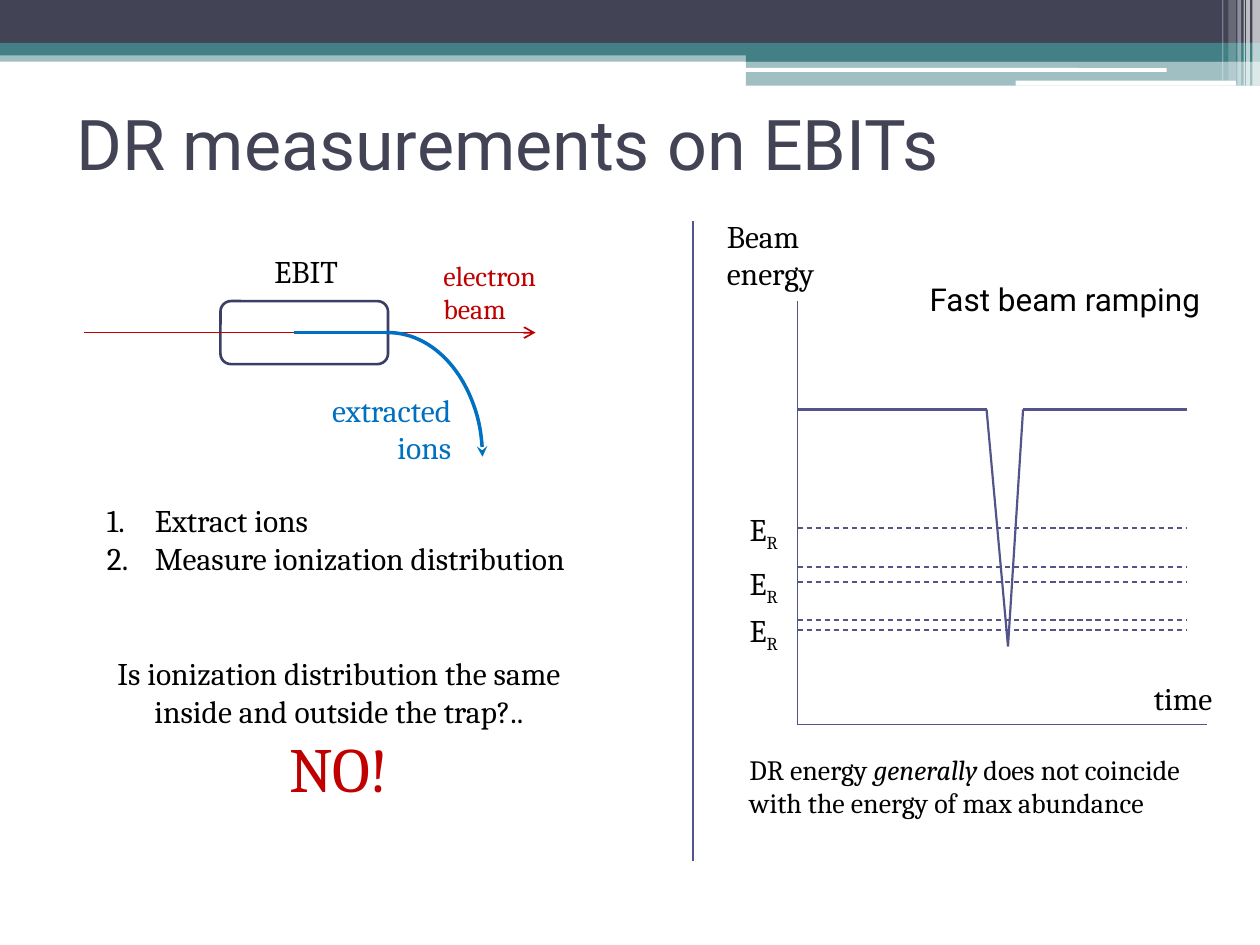
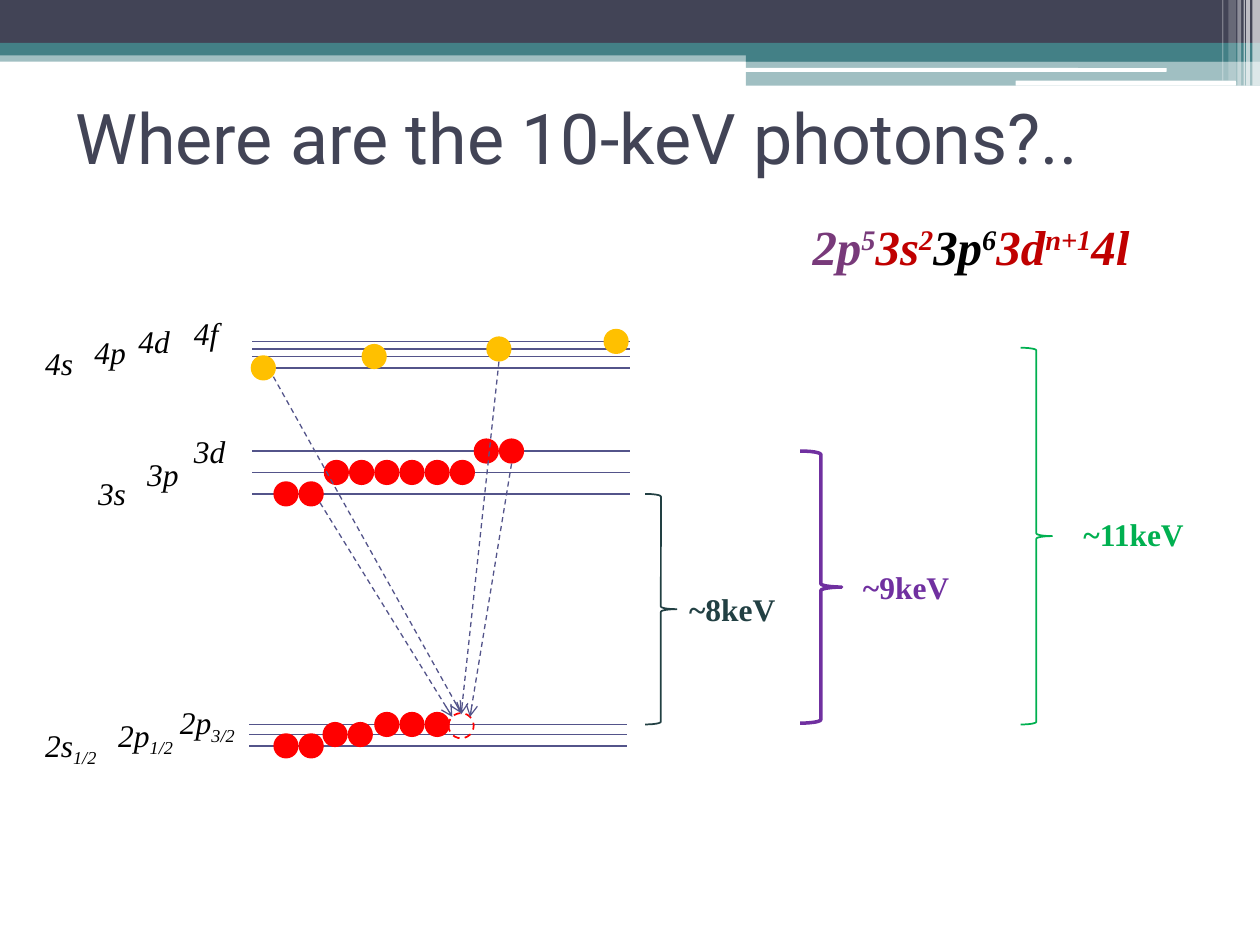
from pptx import Presentation
from pptx import util as u
from pptx.dml.color import RGBColor
from pptx.enum import dml, shapes, text
from pptx.oxml.ns import qn
from pptx.oxml.xmlchemy import OxmlElement

SLATE, TEAL, WHITE, BLACK = "424456", "438086", "FFFFFF", "000000"
INDIGO, CRIMSON, BLUE, RED, GOLD = "53548A", "C00000", "0070C0", "FF0000", "FFC000"
PLUM, DARK_TEAL, PURPLE, GREEN = "783A7A", "224043", "7030A0", "00B050"
SERIF, SANS, TIMES = "Cambria", "Roboto", "Times New Roman"
PRESET = shapes.MSO_SHAPE
RIGHT, CENTER = text.PP_ALIGN.RIGHT, text.PP_ALIGN.CENTER
SUB, SUPER = {"base": -25}, {"base": 30}

TOP_BANDS = [
    (0, 0.4, 10, 0.09, TEAL, 50),
    (0, 0, 10, 0.34, SLATE, 100),
    (0, 0.34, 10, 0.1, TEAL, 100),
    (5.92, 0.39, 4.08, 0.1, TEAL, 100),
    (5.92, 0.48, 4.08, 0.2, TEAL, 50),
]
WHITE_BARS = [(5.91, 0.54, 3.35, 0.03), (8.06, 0.64, 1.75, 0.04)]
CORNER_STRIPES = [
    (9.94, 0.06, 0.68, 65),
    (9.89, 0.03, 0.68, 65),
    (9.87, 0.01, 0.68, 60),
    (9.82, 0.03, 0.68, 40),
    (9.75, 0.06, 0.64, 20),
    (9.7, 0.01, 0.64, 30),
]


def rgb(value):
    return RGBColor.from_string(value)


def add_child(parent, tag, **attributes):
    child = OxmlElement(tag)
    for name, value in attributes.items():
        child.set(name, str(value))
    parent.append(child)


class Deck:
    def __init__(self):
        self.presentation = Presentation()
        self.presentation.slide_width = u.Inches(10)
        self.presentation.slide_height = u.Inches(7.5)
        self.slide = None

    def new_slide(self, title, left, top):
        self.slide = self.presentation.slides.add_slide(self.presentation.slide_layouts[6])
        for x, y, width, height, color, opacity in TOP_BANDS:
            self.shape(PRESET.RECTANGLE, x, y, width, height, fill=color, opacity=opacity)
        for bar in WHITE_BARS:
            self.shape(PRESET.ROUNDED_RECTANGLE, *bar, fill=WHITE)
        for x, width, height, opacity in CORNER_STRIPES:
            self.shape(PRESET.RECTANGLE, x, 0, width, height, fill=WHITE, opacity=opacity)
        self.text(left, top, 9, 1.17, [title], 40, SLATE, SANS, wrap=True)

    def style_line(self, line, color, width, dashed=False, arrow=None):
        line.color.rgb = rgb(color)
        line.width = u.Pt(width)
        if dashed:
            line.dash_style = dml.MSO_LINE.DASH
        if arrow:
            add_child(line._get_or_add_ln(), "a:tailEnd", type=arrow)

    def shape(self, preset, left, top, width, height, fill=None, opacity=100,
              outline=None, weight=1, dashed=False, arrow=None, angles=()):
        shape = self.slide.shapes.add_shape(
            preset, u.Inches(left), u.Inches(top), u.Inches(width), u.Inches(height))
        shape.shadow.inherit = False
        for index, angle in enumerate(angles):
            shape.adjustments[index] = angle
        if fill:
            shape.fill.solid()
            shape.fill.fore_color.rgb = rgb(fill)
            if opacity < 100:
                solid = shape._element.spPr.find(qn("a:solidFill"))
                add_child(solid[0], "a:alpha", val=opacity * 1000)
        else:
            shape.fill.background()
        if outline:
            self.style_line(shape.line, outline, weight, dashed, arrow)
        else:
            shape.line.fill.background()

    def line(self, x1, y1, x2, y2, color=INDIGO, weight=0.75, dashed=False, arrow=None):
        connector = self.slide.shapes.add_connector(
            shapes.MSO_CONNECTOR.STRAIGHT,
            u.Inches(x1), u.Inches(y1), u.Inches(x2), u.Inches(y2))
        self.style_line(connector.line, color, weight, dashed, arrow)
        add_child(connector._element.spPr, "a:effectLst")

    def text(self, left, top, width, height, lines, size=18, color=BLACK, font=SERIF,
             bold=False, italic=False, align=None, numbered=False, wrap=False):
        box = self.slide.shapes.add_textbox(
            u.Inches(left), u.Inches(top), u.Inches(width), u.Inches(height))
        frame = box.text_frame
        frame.word_wrap = wrap
        if wrap:
            frame.vertical_anchor = text.MSO_ANCHOR.MIDDLE
        else:
            frame.auto_size = text.MSO_AUTO_SIZE.SHAPE_TO_FIT_TEXT
        for index, line in enumerate(lines):
            paragraph = frame.add_paragraph() if index else frame.paragraphs[0]
            if numbered:
                properties = paragraph._p.get_or_add_pPr()
                properties.set("marL", str(u.Inches(0.38)))
                properties.set("indent", str(-u.Inches(0.38)))
                add_child(properties, "a:buAutoNum", type="arabicPeriod")
            paragraph.alignment = align
            paragraph.font.size = u.Pt(size)
            paragraph.font.name = font
            paragraph.font.bold = bold
            paragraph.font.italic = italic
            paragraph.font.color.rgb = rgb(color)
            for words, changes in [(line, {})] if isinstance(line, str) else line:
                self.run(paragraph, words, **changes)
        return frame.paragraphs

    def run(self, paragraph, words, base=None, color=None, italic=None):
        run = paragraph.add_run()
        run.text = words
        if base:
            run._r.get_or_add_rPr().set("baseline", str(base * 1000))
        if color:
            run.font.color.rgb = rgb(color)
        if italic:
            run.font.italic = True


def build_measurements(deck):
    deck.new_slide("DR measurements on EBITs", 0.51, 0.55)

    deck.shape(PRESET.ROUNDED_RECTANGLE, 1.75, 2.39, 1.33, 0.5, outline="3D3E66", weight=1.5)
    deck.line(0.67, 2.64, 4.25, 2.64, CRIMSON, 1, arrow="arrow")
    deck.shape(PRESET.ARC, 2.33, 2.64, 1.5, 2, outline=BLUE, weight=2,
               arrow="stealth", angles=(161.392, 215.323))
    deck.line(2.33, 2.64, 3.07, 2.64, BLUE, 2)
    deck.text(2.08, 1.95, 0.79, 0.4, ["EBIT"])
    deck.text(3.42, 2, 1.01, 0.64, ["electron", "beam"], 16, CRIMSON)
    deck.text(2.44, 3.05, 1.24, 0.71, ["extracted", "ions"], color=BLUE, align=RIGHT)

    question = ["Is ionization distribution the same", "inside and outside the trap?..", "NO!"]
    answer = deck.text(0.67, 5.14, 4.04, 1.31, question, align=CENTER)[-1]
    answer.font.size = u.Pt(36)
    answer.font.color.rgb = rgb(CRIMSON)
    deck.text(0.75, 3.93, 4.12, 0.71,
              ["Extract ions", "Measure ionization distribution"], numbered=True)

    deck.line(5.5, 1.75, 5.5, 6.83)
    deck.line(6.33, 2.39, 6.33, 5.75)
    deck.line(6.33, 5.75, 9.58, 5.75)
    ramp = [(6.33, 3.25), (7.83, 3.25), (8, 5.13), (8.12, 3.25), (9.42, 3.25)]
    for start, end in zip(ramp, ramp[1:]):
        deck.line(*start, *end, weight=1.25)
    deck.text(5.67, 1.67, 0.95, 0.71, ["Beam", "energy"])
    deck.text(9.06, 5.34, 0.71, 0.4, ["time"])
    for resonance in (4.19, 4.5, 4.62, 4.92, 5):
        deck.line(6.33, resonance, 9.42, resonance, dashed=True)
    for label_top in (4, 4.43, 4.8):
        deck.text(5.85, label_top, 0.48, 0.4, [[("E", {}), ("R", SUB)]])
    deck.text(7.28, 2.17, 2.36, 0.4, ["Fast beam ramping"], font=SANS)
    deck.text(5.85, 5.92, 4.1, 0.64, [
        [("DR energy ", {}), ("generally", {"italic": True}), (" does not coincide", {})],
        "with the energy of max abundance",
    ], 16)


def build_photons(deck):
    deck.new_slide("Where are the 10-keV photons?..", 0.5, 0.5)

    configuration = [
        ("2p", "5", PLUM), ("3s", "2", CRIMSON), ("3p", "6", BLACK),
        ("3d", "n+1", CRIMSON), ("4l", "", CRIMSON),
    ]
    formula = []
    for orbital, occupancy, color in configuration:
        formula.append((orbital, {"color": color}))
        if occupancy:
            formula.append((occupancy, {"color": color, **SUPER}))
    deck.text(6.35, 1.67, 2.85, 0.57, [formula], 28, font=TIMES, bold=True, italic=True)

    levels = {2: (2.71, 2.77, 2.83, 2.92, 3.58, 3.75, 3.92), 1.98: (5.75, 5.83, 5.92)}
    for left, heights in levels.items():
        for height in heights:
            deck.line(left, height, left + 3, height)

    dot = 0.2
    filled = [(2.17, 5.82, 2), (2.56, 5.73, 2), (2.97, 5.65, 3),
              (2.17, 3.82, 2), (2.57, 3.65, 6), (3.76, 3.48, 2)]
    for left, top, count in filled:
        for index in range(count):
            deck.shape(PRESET.OVAL, left + index * dot, top, dot, dot, fill=RED)
    deck.shape(PRESET.OVAL, 3.56, 5.66, dot, dot, outline=RED, dashed=True)
    for left, top in ((1.99, 2.82), (2.87, 2.73), (3.86, 2.67), (4.79, 2.61)):
        deck.shape(PRESET.OVAL, left, top, dot, dot, fill=GOLD)

    decays = [(2.54, 3.99, 3.59, 5.69), (4.06, 3.68, 3.73, 5.69),
              (3.96, 2.87, 3.66, 5.67), (2.17, 2.99, 3.66, 5.66)]
    for decay in decays:
        deck.line(*decay, dashed=True, arrow="arrow")

    orbitals = [
        ("2s", "1/2", 0.26, 5.71, 0.64), ("2p", "1/2", 0.84, 5.63, 0.67),
        ("2p", "3/2", 1.33, 5.53, 0.67), ("3s", "", 0.68, 3.71, 0.43),
        ("3p", "", 1.07, 3.56, 0.45), ("3d", "", 1.44, 3.38, 0.45),
        ("4s", "", 0.26, 2.68, 0.43), ("4p", "", 0.65, 2.59, 0.45),
        ("4d", "", 1, 2.51, 0.45), ("4f", "", 1.44, 2.44, 0.4),
    ]
    for orbital, spin, left, top, width in orbitals:
        label = [(orbital, {}), (spin, SUB)] if spin else orbital
        deck.text(left, top, width, 0.4, [label], font=TIMES, italic=True)

    gaps = [
        ("~8keV", DARK_TEAL, 1, (5.12, 3.92, 0.25, 1.83), (5.37, 4.63, 0.89)),
        ("~9keV", PURPLE, 2, (6.35, 3.58, 0.33, 2.16), (6.75, 4.46, 0.89)),
        ("~11keV", GREEN, 1, (8.1, 2.76, 0.25, 2.99), (8.5, 4.04, 1.01)),
    ]
    for energy, color, weight, brace, place in gaps:
        deck.shape(PRESET.RIGHT_BRACE, *brace, outline=color, weight=weight)
        deck.text(*place, 0.4, [energy], color=color, font=TIMES, bold=True)


def main():
    deck = Deck()
    build_measurements(deck)
    build_photons(deck)
    deck.presentation.save("out.pptx")


if __name__ == "__main__":
    main()
